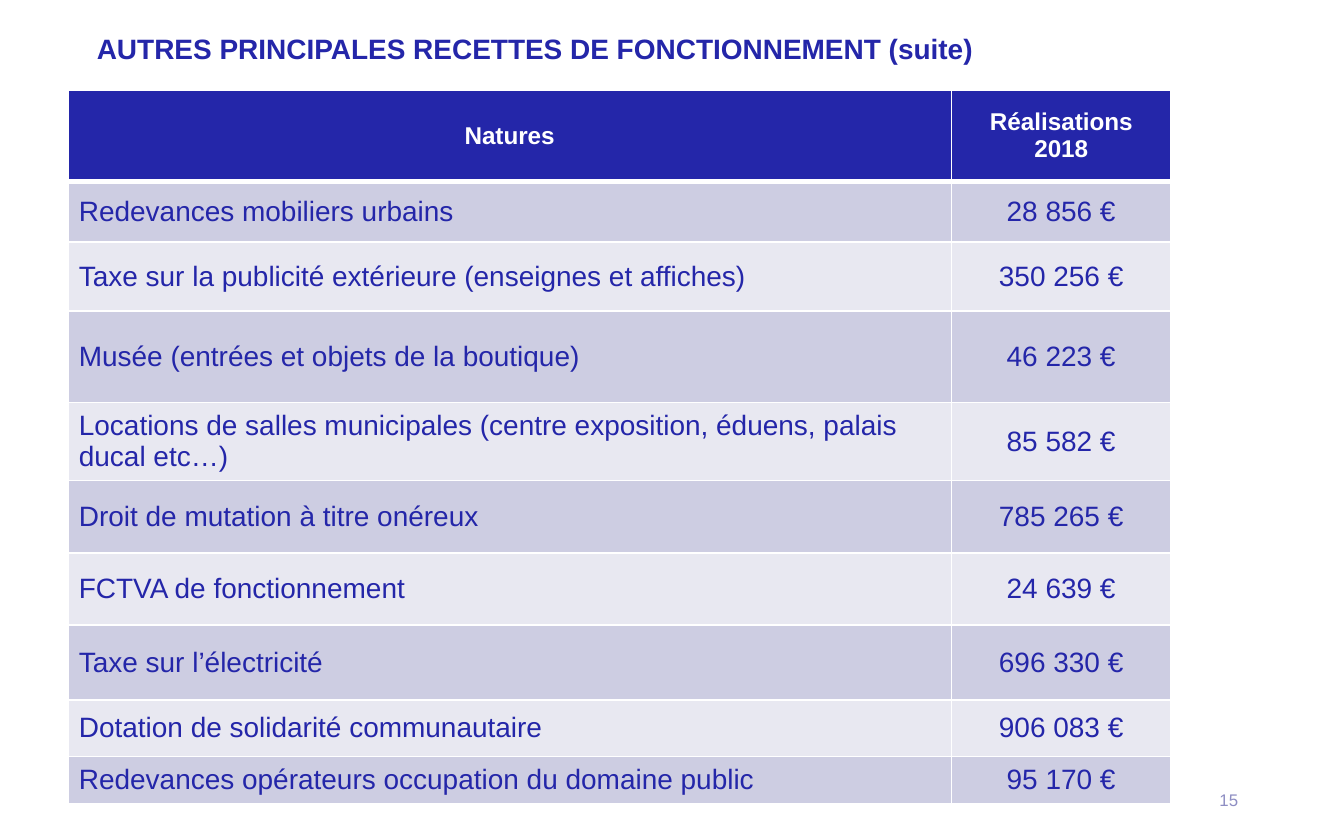
from lxml.etree import SubElement
from pptx import Presentation
from pptx.dml.color import RGBColor
from pptx.enum.text import MSO_ANCHOR, PP_ALIGN
from pptx.oxml.ns import qn
from pptx.util import Cm, Pt

COLORS = {
    "navy": "2426A9",
    "white": "FFFFFF",
    "dark_band": "CDCDE2",
    "light_band": "E8E8F1",
    "page_number": "8E8EC3",
}
FONT = "Arial"

HEADINGS = ("Natures", "Réalisations 2018")
# Nature, amount, row height in cm
REVENUES = [
    ("Redevances mobiliers urbains", "28 856 €", 1.14),
    ("Taxe sur la publicité extérieure (enseignes et affiches)", "350 256 €", 1.3),
    ("Musée (entrées et objets de la boutique)", "46 223 €", 1.73),
    ("Locations de salles municipales (centre exposition, éduens, palais ducal etc…)",
     "85 582 €", 1.38),
    ("Droit de mutation à titre onéreux", "785 265 €", 1.37),
    ("FCTVA de fonctionnement", "24 639 €", 1.36),
    ("Taxe sur l’électricité", "696 330 €", 1.42),
    ("Dotation de solidarité communautaire", "906 083 €", 1.07),
    ("Redevances opérateurs occupation du domaine public", "95 170 €", 0.89),
]
HEADER_HEIGHT = 1.74
COLUMN_WIDTHS = (16.7, 4.15)


def color(name):
    return RGBColor.from_string(COLORS[name])


def write(frame, text, size, ink, bold=False, align=PP_ALIGN.LEFT):
    frame.text = text
    para = frame.paragraphs[0]
    para.alignment = align
    span = para.runs[0]
    span.font.name = FONT
    span.font.size = Pt(size)
    span.font.bold = bold
    span.font.color.rgb = color(ink)
    return para


def add_text(page, area, text, size, ink, **style):
    box = page.shapes.add_textbox(*(Cm(length) for length in area))
    frame = box.text_frame
    frame.word_wrap = True
    frame.vertical_anchor = MSO_ANCHOR.MIDDLE
    return write(frame, text, size, ink, **style)


def set_borders(cell, bottom_width, top_width):
    properties = cell._tc.get_or_add_tcPr()
    widths = {"a:lnL": 1, "a:lnR": 1, "a:lnT": top_width, "a:lnB": bottom_width}
    for position, (tag, width) in enumerate(widths.items()):
        line = SubElement(properties, qn(tag), w=str(Pt(width)))
        fill = SubElement(line, qn("a:solidFill"))
        SubElement(fill, qn("a:srgbClr"), val=COLORS["white"])
        properties.insert(position, line)  # borders come before the fill


def fill_cell(cell, text, size, ink, band, **style):
    cell.margin_left = cell.margin_right = Cm(0.21)
    cell.margin_top = cell.margin_bottom = Cm(0.1)
    cell.vertical_anchor = MSO_ANCHOR.MIDDLE
    cell.fill.solid()
    cell.fill.fore_color.rgb = color(band)
    write(cell.text_frame, text, size, ink, **style)


def add_revenue_table(page):
    heights = [HEADER_HEIGHT] + [height for _, _, height in REVENUES]
    table = page.shapes.add_table(
        len(heights), len(COLUMN_WIDTHS), Cm(1.28), Cm(1.7),
        Cm(sum(COLUMN_WIDTHS)), Cm(sum(heights))).table
    for column, width in zip(table.columns, COLUMN_WIDTHS):
        column.width = Cm(width)
    for row, height in zip(table.rows, heights):
        row.height = Cm(height)

    # Header row, with a thicker rule below
    for cell, heading in zip(table.rows[0].cells, HEADINGS):
        fill_cell(cell, heading, 13, "white", "navy", bold=True, align=PP_ALIGN.CENTER)
        set_borders(cell, bottom_width=3, top_width=1)

    # Banded revenue rows
    for index, (nature, amount, _) in enumerate(REVENUES, start=1):
        band = "dark_band" if index % 2 else "light_band"
        nature_cell, amount_cell = table.rows[index].cells
        fill_cell(nature_cell, nature, 15, "navy", band)
        fill_cell(amount_cell, amount, 15, "navy", band, align=PP_ALIGN.CENTER)
        for cell in (nature_cell, amount_cell):
            set_borders(cell, bottom_width=1, top_width=3 if index == 1 else 1)


def main():
    deck = Presentation()
    deck.slide_width, deck.slide_height = Cm(25.4), Cm(15.88)
    page = deck.slides.add_slide(deck.slide_layouts[6])

    # Title
    title = add_text(page, (1.58, 0.23, 20.85, 1.45),
                     "AUTRES PRINCIPALES RECETTES DE FONCTIONNEMENT (suite)",
                     15, "navy", bold=True)
    title.line_spacing = 0.9

    # Revenue table
    add_revenue_table(page)

    # Page number
    add_text(page, (17.93, 14.71, 5.72, 0.84), "15", 9, "page_number",
             align=PP_ALIGN.RIGHT)

    deck.save("out.pptx")


if __name__ == "__main__":
    main()
